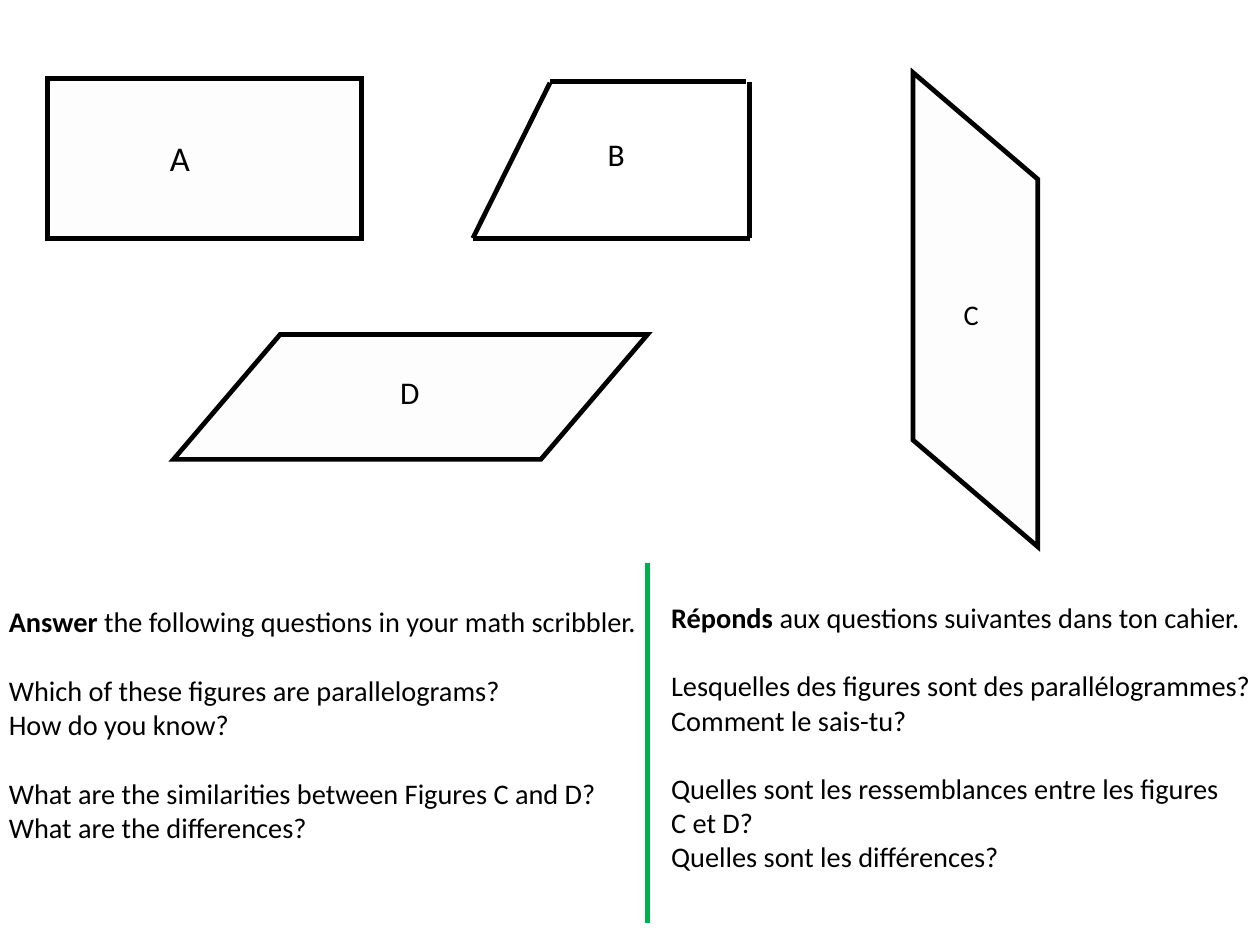
from lxml import etree
from pptx import Presentation
from pptx.dml.color import RGBColor
from pptx.enum.shapes import MSO_CONNECTOR, MSO_SHAPE
from pptx.oxml.ns import qn
from pptx.util import Inches, Pt

RECTANGLE = MSO_SHAPE.RECTANGLE
STRAIGHT = MSO_CONNECTOR.STRAIGHT
WIDTH, HEIGHT = Inches(11.11), Inches(8.33)
CELL = WIDTH / 100  # square grid: 100 columns by 75 rows
BLACK, GREEN, PALE = "000000", "00B050", "FDFDFD"

# Parallelogram shared by figures C and D
LENGTH, THICKNESS, SLANT = 37.62, 9.9, 8.46
PARALLELOGRAM = [(0, THICKNESS), (SLANT, 0), (LENGTH, 0), (LENGTH - SLANT, THICKNESS)]

ENGLISH = [
    ("Answer", " the following questions in your math scribbler."),
    ("", "Which of these figures are parallelograms?"),
    ("", "How do you know?"),
    ("", "What are the similarities between Figures C and D?"),
    ("", "What are the differences?"),
]
FRENCH = [
    ("Réponds ", "aux questions suivantes dans ton cahier."),
    ("", "Lesquelles des figures sont des parallélogrammes?"),
    ("", "Comment le sais-tu?"),
    ("", "Quelles sont les ressemblances entre les figures"),
    ("", "C et D?"),
    ("", "Quelles sont les différences?"),
]
GROUP_STARTS = (1, 3)  # paragraphs that open a new group of questions


def grid(*cells):
    return [round(cell * CELL) for cell in cells]


def color(value):
    return RGBColor.from_string(value)


def style_line(line, line_color=BLACK):
    line.width = Pt(3)
    line.color.rgb = color(line_color)


def style_figure(shape):
    shape.shadow.inherit = False
    shape.fill.solid()
    shape.fill.fore_color.rgb = color(PALE)
    style_line(shape.line)
    outline = shape._element.spPr.find(qn("a:ln"))
    etree.SubElement(outline, qn("a:miter"), lim="800000")


def add_rectangle(slide, left, top, width, height):
    style_figure(slide.shapes.add_shape(RECTANGLE, *grid(left, top, width, height)))


def add_polygon(slide, left, top, points):
    corners = [grid(left + x, top + y) for x, y in points]
    builder = slide.shapes.build_freeform(*corners[0])
    builder.add_line_segments(corners[1:], close=True)
    style_figure(builder.convert_to_shape())


def add_line(slide, start, end, line_color=BLACK):
    connector = slide.shapes.add_connector(STRAIGHT, *grid(*start, *end))
    style_line(connector.line, line_color)
    etree.SubElement(connector._element.spPr, qn("a:effectLst"))


def add_text(slide, box, lines, size=18, group_starts=()):
    """Write (bold part, plain part) lines, with a gap before each group."""
    frame = slide.shapes.add_textbox(*grid(*box)).text_frame
    frame.word_wrap = True
    for index, parts in enumerate(lines):
        paragraph = frame.add_paragraph() if index else frame.paragraphs[0]
        if index in group_starts:
            paragraph.space_before = Pt(22)
        for text, bold in zip(parts, (True, False)):
            if text:
                run = paragraph.add_run()
                run.text = text
                run.font.name = "Calibri"
                run.font.size = Pt(size)
                run.font.bold = bold
                run.font.color.rgb = color(BLACK)


def main():
    presentation = Presentation()
    presentation.slide_width, presentation.slide_height = WIDTH, HEIGHT
    slide = presentation.slides.add_slide(presentation.slide_layouts[6])

    # Figures A, D and C; C is D turned by a quarter
    add_rectangle(slide, 3.78, 6.25, 24.9, 12.65)
    add_polygon(slide, 13.77, 26.55, PARALLELOGRAM)
    add_polygon(slide, 72.46, 5.76, [(THICKNESS - y, x) for x, y in PARALLELOGRAM])

    # Figure B, made of four separate sides
    bottom_left, bottom_right = (37.53, 18.9), (59.49, 18.9)
    add_line(slide, bottom_left, bottom_right)
    add_line(slide, bottom_left, (43.65, 6.57))
    add_line(slide, bottom_right, (59.49, 6.48))
    add_line(slide, (59.22, 6.48), (43.65, 6.48))

    # Figure letters
    for letter, left, top, size in (
        ("A", 12.6, 10.44, 22),
        ("B", 47.34, 10.26, 20),
        ("C", 75.6, 23.13, 18),
        ("D", 30.87, 29.16, 20),
    ):
        add_text(slide, (left, top, 8.5, 4), [("", letter)], size=size)

    # Questions in both languages, with a divider
    add_text(slide, (-0.18, 47.52, 65.5, 20), ENGLISH, group_starts=GROUP_STARTS)
    add_line(slide, (51.39, 44.64), (51.39, 73.26), GREEN)
    add_text(slide, (52.38, 47.16, 50, 22.7), FRENCH, group_starts=GROUP_STARTS)

    presentation.save("out.pptx")


if __name__ == "__main__":
    main()
